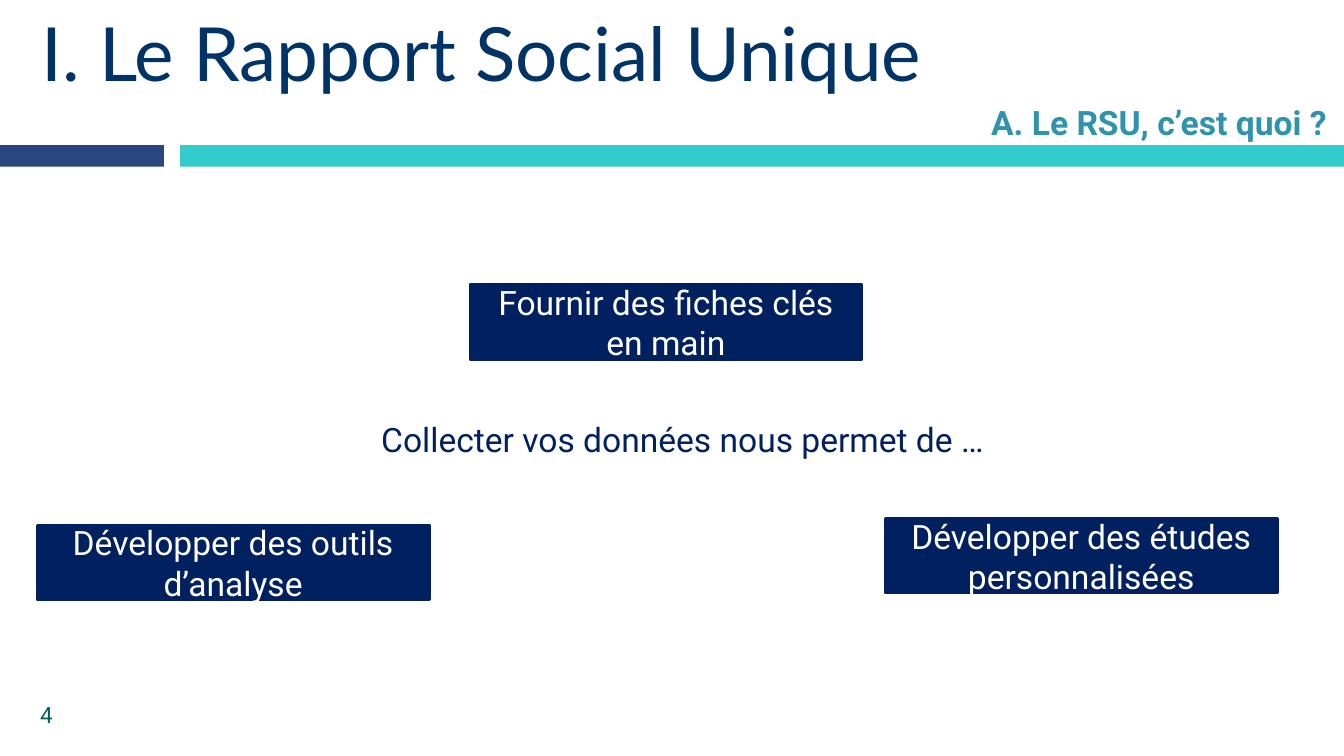
"""Build the slide on what collecting RSU data makes possible."""
import pptx
import pptx.util
import pptx.dml.color
import pptx.enum.shapes
import pptx.enum.text

Inches, Pt = pptx.util.Inches, pptx.util.Pt
ALIGN = pptx.enum.text.PP_ALIGN
ANCHOR = pptx.enum.text.MSO_ANCHOR
NAVY, WHITE = "002060", "FFFFFF"
WIDTH = Inches(10)
CARD = (2.91, 0.55)

BARS = [((1.34, 1.08, 8.66, 0.16), "33CCCC"), ((0, 1.08, 1.22, 0.16), "2A467E")]
CARDS = [
    ("Fournir des fiches clés en main", 3.5, 2.12),
    ("Développer des études personnalisées", 6.59, 3.86),
    ("Développer des outils d’analyse", 0.28, 3.91),
]
TEXTS = [
    ("4", (0.2, 5.17, 2.33, 0.3),
     dict(size=12, color="005B59")),
    ("Collecter vos données nous permet de …", (2.56, 2.99, 5.04, 0.55),
     dict(color=NAVY, align=ALIGN.CENTER)),
    ("I. Le Rapport Social Unique", (-0.28, -0.04, 8.82, 0.85),
     dict(size=40, color="003366", font="Lato", inset=0.59)),
    ("A. Le RSU, c’est quoi ?", (4.93, 0.71, 5.04, 0.4),
     dict(color="2F93AB", align=ALIGN.RIGHT, bold=True, anchor=ANCHOR.TOP)),
]


def rgb(code):
    return pptx.dml.color.RGBColor.from_string(code)


def write(shape, text, color, size=18, font="Roboto", align=ALIGN.LEFT,
          bold=False, anchor=ANCHOR.MIDDLE, inset=0.1):
    frame = shape.text_frame
    frame.text = text
    frame.word_wrap = True
    frame.vertical_anchor = anchor
    frame.margin_left = Inches(inset)
    para = frame.paragraphs[0]
    para.alignment = align
    face = para.runs[0].font
    face.name, face.size, face.bold = font, Pt(size), bold
    face.color.rgb = rgb(color)


def block(slide, area, fill):
    kind = pptx.enum.shapes.MSO_SHAPE.RECTANGLE
    shape = slide.shapes.add_shape(kind, *map(Inches, area))
    shape.shadow.inherit = False
    shape.fill.solid()
    shape.fill.fore_color.rgb = rgb(fill)
    shape.line.fill.background()
    return shape


def main():
    deck = pptx.Presentation()
    deck.slide_width, deck.slide_height = WIDTH, WIDTH * 9 // 16
    slide = deck.slides.add_slide(deck.slide_layouts[6])
    for area, fill in BARS:
        block(slide, area, fill)
    for text, left, top in CARDS:
        card = block(slide, (left, top, *CARD), NAVY)
        card.line.color.rgb = rgb(NAVY)
        card.line.width = Pt(2)
        write(card, text, WHITE, align=ALIGN.CENTER)
    for text, area, style in TEXTS:
        write(slide.shapes.add_textbox(*map(Inches, area)), text, **style)
    deck.save("out.pptx")


if __name__ == "__main__":
    main()
